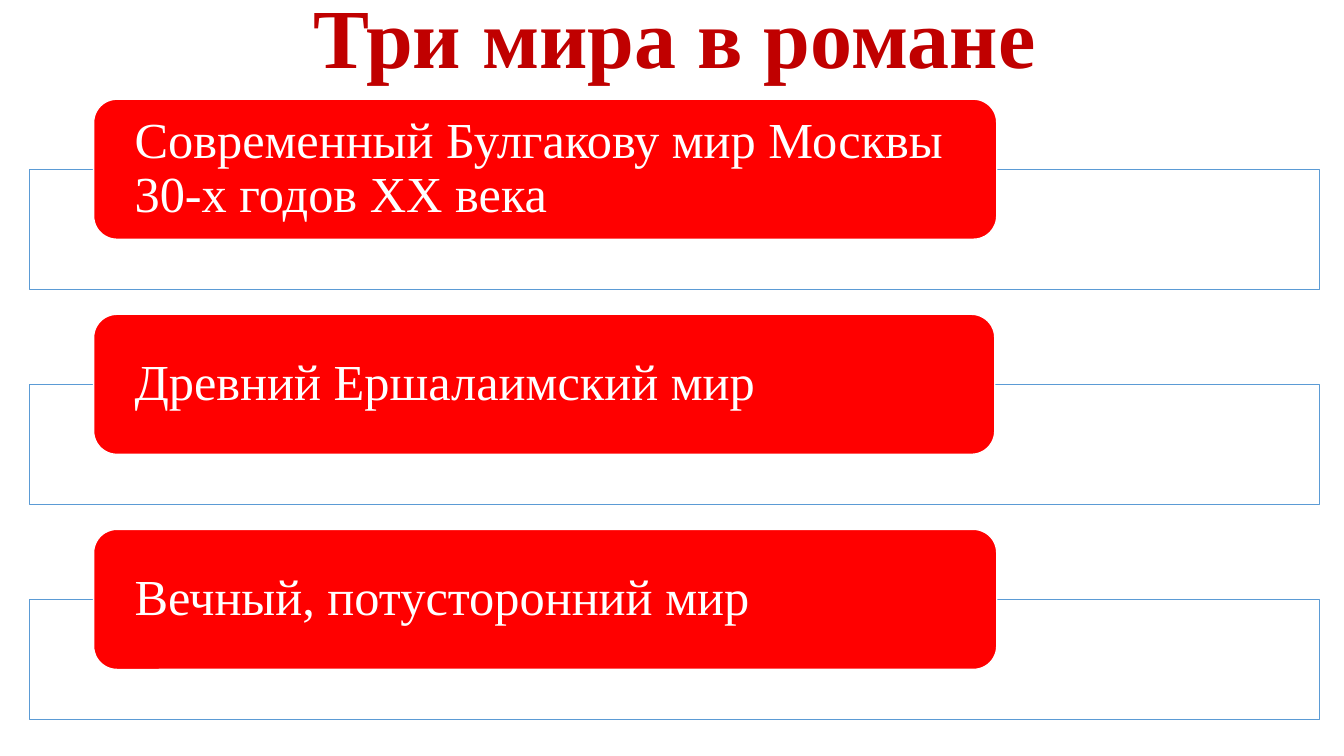
from dataclasses import dataclass
from pptx import Presentation
from pptx.dml.color import RGBColor
from pptx.enum.shapes import MSO_SHAPE
from pptx.enum.text import MSO_ANCHOR, PP_ALIGN
from pptx.util import Cm, Pt


@dataclass
class Theme:
    font: str = "Times New Roman"
    title: str = "C00000"
    card: str = "FF0000"
    line: str = "5B9BD5"
    white: str = "FFFFFF"
    large: int = 60
    body: int = 36


theme = Theme()


def add_box(kind, left, top, width, height, fill, line):
    box = slide.shapes.add_shape(kind, Cm(left), Cm(top), Cm(width), Cm(height))
    box.shadow.inherit = False
    box.fill.solid()
    box.fill.fore_color.rgb = RGBColor.from_string(fill)
    box.line.color.rgb = RGBColor.from_string(line)
    box.line.width = Pt(1)
    return box


def set_text(frame, text, size, color, align):
    frame.text = text
    frame.word_wrap = True
    para = frame.paragraphs[0]
    para.alignment = align
    font = para.runs[0].font
    font.name = theme.font
    font.size = Pt(size)
    font.color.rgb = RGBColor.from_string(color)
    return para


deck = Presentation()
deck.slide_width, deck.slide_height = Cm(33.87), Cm(19.05)
slide = deck.slides.add_slide(deck.slide_layouts[6])

left, width = 0.74, 32.51
title = slide.shapes.add_textbox(Cm(left), Cm(-0.51), Cm(width), Cm(2.82))
para = set_text(title.text_frame, "Три мира в романе", theme.large, theme.title, PP_ALIGN.CENTER)
para.runs[0].font.bold = True

worlds = [
    ("Современный Булгакову мир Москвы 30-х годов ХХ века", 22.76),
    ("Древний Ершалаимский мир", 22.71),
    ("Вечный, потусторонний мир", 22.76),
]
first, pitch = 2.5, 5.42
for row, (text, wide) in enumerate(worlds):
    top = first + row * pitch
    add_box(MSO_SHAPE.RECTANGLE, left, top + 1.77, width, 3.02, theme.white, theme.line)
    card = add_box(MSO_SHAPE.ROUNDED_RECTANGLE, 2.36, top, wide, 3.53, theme.card, theme.white)
    frame = card.text_frame
    frame.margin_left = frame.margin_right = Cm(0.86)
    frame.margin_top = frame.margin_bottom = Cm(0)
    frame.vertical_anchor = MSO_ANCHOR.MIDDLE
    para = set_text(frame, text, theme.body, theme.white, PP_ALIGN.LEFT)
    para.line_spacing = 0.9

deck.save("out.pptx")
